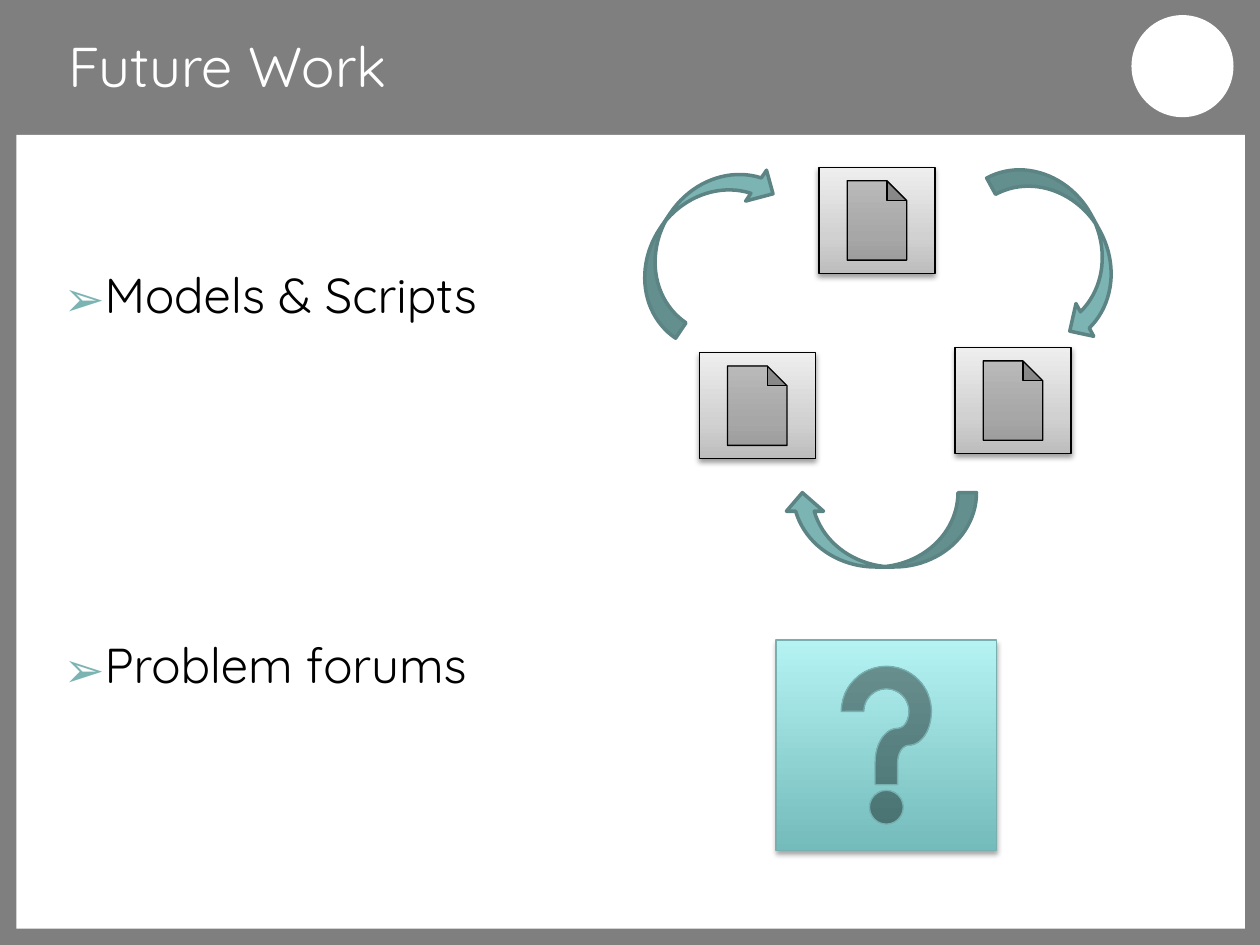
from dataclasses import dataclass

from lxml import etree
from pptx import Presentation
from pptx.dml.color import RGBColor
from pptx.enum import shapes, text
from pptx.oxml import ns
from pptx.util import Inches, Pt

FONT = "Quicksand"
BULLET_FONT = "Noto Sans Symbols"
GRAY, WHITE, BLACK = "807F7F", "FFFFFF", "000000"
TEAL, DARK_TEAL = "7CB3B3", "5C8484"
GRAY_STOPS = ((0, "BDBDBD"), (35, "D1D1D1"), (100, "EEEEEE"))
TEAL_STOPS = ((0, "74BBBB"), (100, "B5F3F3"))
KIND = shapes.MSO_SHAPE


@dataclass
class Button:
    kind: int
    box: tuple
    stops: tuple
    line: str
    shadow_alpha: int
    shadow_dist: float


@dataclass
class CycleArrow:
    left: float
    top: float
    rotation: float


def rgb(color: str) -> RGBColor:
    return RGBColor.from_string(color)


def sub(parent, tag: str, **attrs):
    """Append a DrawingML child element."""
    values = {name: str(value) for name, value in attrs.items()}
    return etree.SubElement(parent, ns.qn(tag), values)


def add_shape(s, kind: int, box: tuple, fill: str = None,
              line: str = None, width: float = 0.75):
    sp = s.shapes.add_shape(kind, *map(Inches, box))
    sp.shadow.inherit = False
    if fill:
        sp.fill.solid()
        sp.fill.fore_color.rgb = rgb(fill)
    if line:
        sp.line.color.rgb = rgb(line)
        sp.line.width = Pt(width)
    else:
        sp.line.fill.background()
    return sp


def add_button(s, b: Button) -> None:
    sp = add_shape(s, b.kind, b.box, line=b.line)
    # Vertical gradient, first stop at the bottom
    sp.fill.gradient()
    sp.fill.gradient_angle = 90
    stops = sp.element.spPr.find(".//" + ns.qn("a:gsLst"))
    for stop in list(stops):
        stops.remove(stop)
    for pos, color in b.stops:
        sub(sub(stops, "a:gs", pos=pos * 1000), "a:srgbClr", val=color)
    # Soft shadow straight below
    effects = sp.element.spPr.find(ns.qn("a:effectLst"))
    shadow = sub(effects, "a:outerShdw", blurRad=Pt(3.1),
                 dist=Pt(b.shadow_dist), dir=5400000, rotWithShape=0)
    color = sub(shadow, "a:srgbClr", val=BLACK)
    sub(color, "a:alpha", val=b.shadow_alpha * 1000)


def add_arrow(s, a: CycleArrow) -> None:
    sp = add_shape(s, KIND.CURVED_DOWN_ARROW, (a.left, a.top, 1.53, 0.59),
                   TEAL, DARK_TEAL, 2)
    sp.rotation = a.rotation


def format_text(p, size: float, color: str) -> None:
    p.alignment = text.PP_ALIGN.LEFT
    p.line_spacing = 0.9
    for r in p.runs:
        r.font.name = FONT
        r.font.size = Pt(size)
        r.font.color.rgb = rgb(color)


def place(sp, box: tuple) -> None:
    sp.left, sp.top, sp.width, sp.height = map(Inches, box)


def set_margins(tf, top: float = 0.1) -> None:
    tf.word_wrap = True
    tf.auto_size = text.MSO_AUTO_SIZE.NONE
    tf.margin_left = tf.margin_right = tf.margin_bottom = Inches(0.1)
    tf.margin_top = Inches(top)


def add_title(s, words: str) -> None:
    title = s.shapes.title
    place(title, (0.44, 0.17, 7.81, 0.72))
    tf = title.text_frame
    tf.text = words
    set_margins(tf)
    tf.vertical_anchor = text.MSO_ANCHOR.BOTTOM
    format_text(tf.paragraphs[0], 32, WHITE)
    # Bring the title in front of the frame
    s.shapes.element.append(title.element)


def add_bullets(s, items: tuple, gap: float) -> None:
    sp = s.shapes.add_textbox(*map(Inches, (0.24, 1.17, 3.89, 6)))
    tf = sp.text_frame
    tf.text = "\n".join(items)
    set_margins(tf, top=0.98)
    for i, p in enumerate(tf.paragraphs):
        format_text(p, 28, BLACK)
        if i:
            p.space_before = Pt(gap)
        props = p._p.get_or_add_pPr()
        props.set("marL", str(Pt(18)))
        props.set("indent", str(Pt(-6)))
        sub(sub(props, "a:buClr"), "a:srgbClr", val=TEAL)
        sub(props, "a:buFont", typeface=BULLET_FONT)
        sub(props, "a:buChar", char="➢")


def main() -> None:
    prs = Presentation()
    prs.slide_width, prs.slide_height = Inches(10), Inches(7.5)
    s = prs.slides.add_slide(prs.slide_layouts[5])

    # Frame, content panel and badge
    add_shape(s, KIND.RECTANGLE, (0, 0, 10, 7.5), GRAY)
    add_shape(s, KIND.RECTANGLE, (0.13, 1.07, 9.75, 6.3), WHITE)
    add_shape(s, KIND.OVAL, (8.98, 0.12, 0.81, 0.81), WHITE)

    # Text
    add_bullets(s, ("Models & Scripts", "Problem forums"), gap=181.5)
    add_title(s, "Future Work")

    # Documents in a cycle
    for left, top in ((6.5, 1.33), (7.58, 2.76), (5.55, 2.8)):
        add_button(s, Button(KIND.ACTION_BUTTON_DOCUMENT,
                             (left, top, 0.92, 0.84),
                             GRAY_STOPS, BLACK, 38, 1.6))
    for arrow in (CycleArrow(7.69, 1.65, 61.5),
                  CycleArrow(4.78, 1.59, 304),
                  CycleArrow(6.22, 3.91, 180)):
        add_arrow(s, arrow)

    # Forum question mark
    add_button(s, Button(KIND.ACTION_BUTTON_HELP, (6.16, 5.08, 1.75, 1.67),
                         TEAL_STOPS, "78B0B0", 35, 1.8))

    prs.save("out.pptx")


if __name__ == "__main__":
    main()
